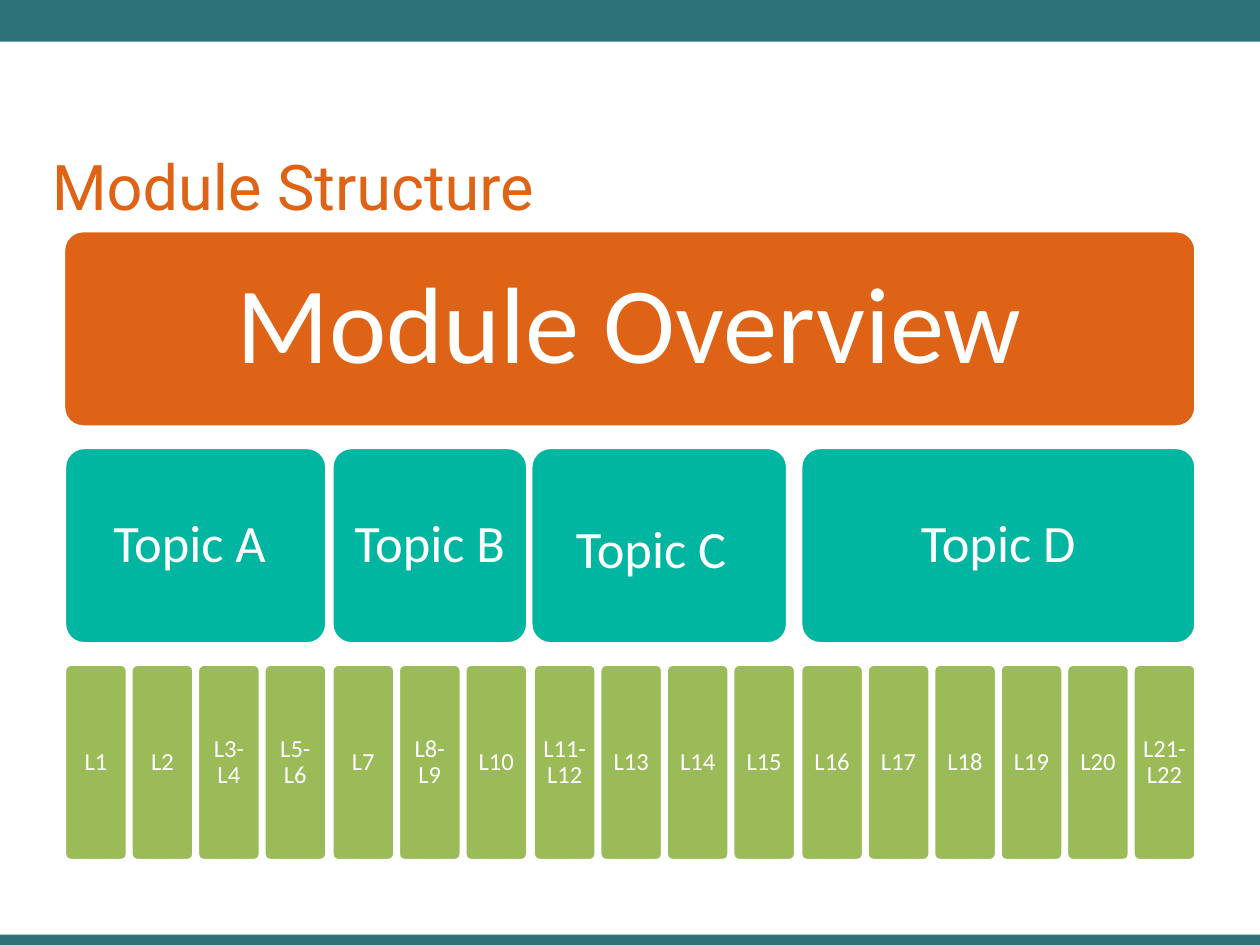
from pptx import Presentation
from pptx.dml.color import RGBColor
from pptx.enum import shapes as kinds, text as t
from pptx.util import Cm, Pt

COLORS = {
    "bar": "2D7278",
    "title": "DF6314",
    "module": "DF6316",
    "topic": "00B6A1",
    "lesson": "9BBB59",
    "white": "FFFFFF",
}
PITCH = 1.34
WIDE = 1.27
TALL = 3.96
TOPICS = [
    (1.3, [("Topic A ", 30)], ["L1", "L2", "L3-L4", "L5-L6"]),
    (6.69, [("Topic B ", 30)], ["L7", "L8-L9", "L10"]),
    (10.75, [("Topic C", 30), (" ", 41)], ["L11-L12", "L13", "L14", "L15"]),
    (16.14, [("Topic D", 30)], ["L16", "L17", "L18", "L19", "L20", "L21-L22"]),
]
SHIFTED = {"Topic C": (10.7, 5.18)}


def tint(name):
    return RGBColor.from_string(COLORS[name])


def add_run(para, words, size, font, color):
    run = para.add_run()
    run.text = words
    run.font.size = Pt(size)
    run.font.name = font
    run.font.color.rgb = tint(color)


def add_shape(slide, kind, box, color):
    shape = slide.shapes.add_shape(kind, *map(Cm, box))
    shape.shadow.inherit = False
    shape.fill.solid()
    shape.fill.fore_color.rgb = tint(color)
    return shape


def add_bar(slide, top, height):
    kind = kinds.MSO_SHAPE.RECTANGLE
    bar = add_shape(slide, kind, (0, top, 25.4, height), "bar")
    bar.line.fill.background()


def add_title(slide, words):
    title = slide.shapes.title
    title.left, title.top = Cm(0.79), Cm(0.84)
    title.width, title.height = Cm(22.86), Cm(3.78)
    frame = title.text_frame
    frame.auto_size = t.MSO_AUTO_SIZE.NONE
    frame.vertical_anchor = t.MSO_ANCHOR.BOTTOM
    para = frame.paragraphs[0]
    para.alignment = t.PP_ALIGN.LEFT
    add_run(para, words, 36, "Roboto", "title")


def add_card(slide, box, color, runs, inset):
    card = add_shape(slide, kinds.MSO_SHAPE.ROUNDED_RECTANGLE, box, color)
    card.adjustments[0] = 0.1
    card.line.color.rgb = tint("white")
    card.line.width = Pt(2)
    frame = card.text_frame
    frame.word_wrap = True
    frame.vertical_anchor = t.MSO_ANCHOR.MIDDLE
    frame.margin_left = frame.margin_right = Cm(inset)
    frame.margin_top = frame.margin_bottom = Cm(inset)
    para = frame.paragraphs[0]
    para.alignment = t.PP_ALIGN.CENTER
    para.line_spacing = 0.9
    for words, size in runs:
        add_run(para, words, size, "Calibri", "white")


def add_topic(slide, left, runs, lessons):
    span = (len(lessons) - 1) * PITCH + WIDE
    start, width = SHIFTED.get(runs[0][0], (left, span))
    add_card(slide, (start, 9.02, width, TALL), "topic", runs, 0.3)
    for i, name in enumerate(lessons):
        box = (left + i * PITCH, 13.39, WIDE, TALL)
        add_card(slide, box, "lesson", [(name, 14)], 0.15)


def main():
    deck = Presentation()
    deck.slide_width, deck.slide_height = Cm(25.4), Cm(19.05)
    slide = deck.slides.add_slide(deck.slide_layouts[5])
    add_bar(slide, 0, 0.84)
    add_bar(slide, 18.84, 0.21)
    add_title(slide, "Module Structure")
    box = (1.28, 4.65, 22.83, TALL)
    add_card(slide, box, "module", [("Module Overview", 62)], 0.66)
    for topic in TOPICS:
        add_topic(slide, *topic)
    deck.save("out.pptx")


if __name__ == "__main__":
    main()
